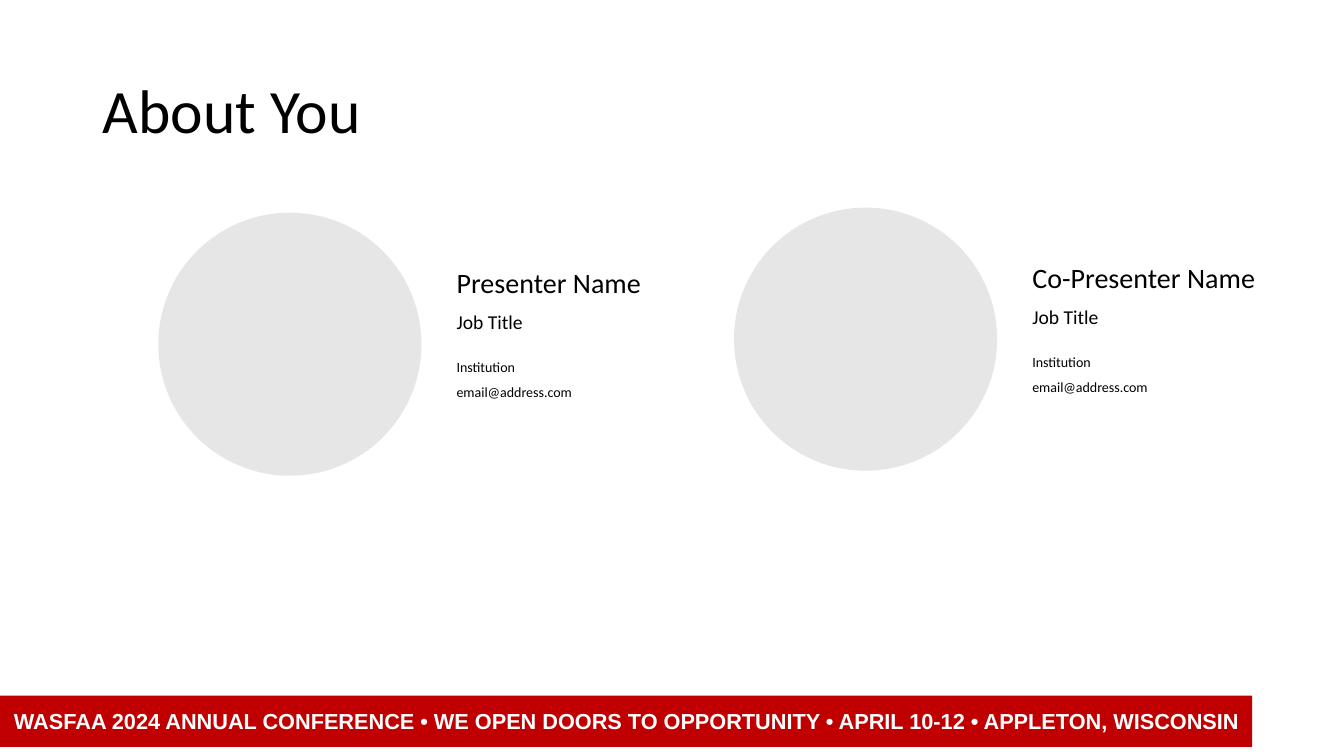
import pptx
import pptx.util
import pptx.dml.color
import pptx.enum.shapes
import pptx.enum.text

Inches = pptx.util.Inches
SHAPE = pptx.enum.shapes.MSO_SHAPE
ALIGN = pptx.enum.text.PP_ALIGN
MIDDLE = pptx.enum.text.MSO_ANCHOR.MIDDLE


def color(hex_value):
    return pptx.dml.color.RGBColor.from_string(hex_value)


def style(p, size, font="Calibri", hex_value="000000", bold=False, spacing=1.0, align=ALIGN.LEFT):
    p.font.size = pptx.util.Pt(size)
    p.font.name = font
    p.font.bold = bold
    p.font.color.rgb = color(hex_value)
    p.line_spacing = spacing
    p.alignment = align


def add_filled(s, kind, left, top, width, height, fill):
    sp = s.shapes.add_shape(kind, Inches(left), Inches(top), Inches(width), Inches(height))
    sp.shadow.inherit = False
    sp.fill.solid()
    sp.fill.fore_color.rgb = color(fill)
    sp.line.fill.background()
    return sp


def add_text(s, left, top, width, height, lines, size, spacing=1.0):
    tf = s.shapes.add_textbox(Inches(left), Inches(top), Inches(width), Inches(height)).text_frame
    tf.word_wrap = True
    tf.text = "\n".join(lines)
    for p in tf.paragraphs:
        style(p, size, spacing=spacing)


def add_title(s, text):
    sp = s.shapes.title
    sp.left, sp.top, sp.width, sp.height = Inches(0.92), Inches(0.4), Inches(11.5), Inches(1.45)
    tf = sp.text_frame
    tf.text = text
    tf.vertical_anchor = MIDDLE
    style(tf.paragraphs[0], 44, spacing=0.9)


def add_banner(s, text):
    tf = add_filled(s, SHAPE.RECTANGLE, 0, 6.9, 12.42, 0.51, "C00000").text_frame
    tf.word_wrap = False
    tf.vertical_anchor = MIDDLE
    tf.text = text
    style(tf.paragraphs[0], 15.5, "Arial", "FFFFFF", bold=True, align=ALIGN.CENTER)


def add_presenter(s, left, top, name):
    """Portrait circle with name, job title and contact lines to its right."""
    add_filled(s, SHAPE.OVAL, left, top, 2.61, 2.61, "E7E6E6")
    text_left = left + 2.86
    add_text(s, text_left, top + 0.31, 2.61, 0.55, [name], 20, 1.5)
    add_text(s, text_left, top + 0.92, 2.37, 0.34, ["Job Title"], 14)
    add_text(s, text_left, top + 1.31, 2.35, 0.58, ["Institution", "email@address.com"], 10, 1.5)


def main():
    prs = pptx.Presentation()
    prs.slide_width, prs.slide_height = Inches(13.33), Inches(7.5)
    s = prs.slides.add_slide(prs.slide_layouts[5])
    add_banner(s, "WASFAA 2024 ANNUAL CONFERENCE • WE OPEN DOORS TO OPPORTUNITY • "
                  "APRIL 10-12 • APPLETON, WISCONSIN")
    add_title(s, "About You")
    add_presenter(s, 1.57, 2.11, "Presenter Name")
    add_presenter(s, 7.28, 2.06, "Co-Presenter Name")
    prs.save("out.pptx")


if __name__ == "__main__":
    main()
